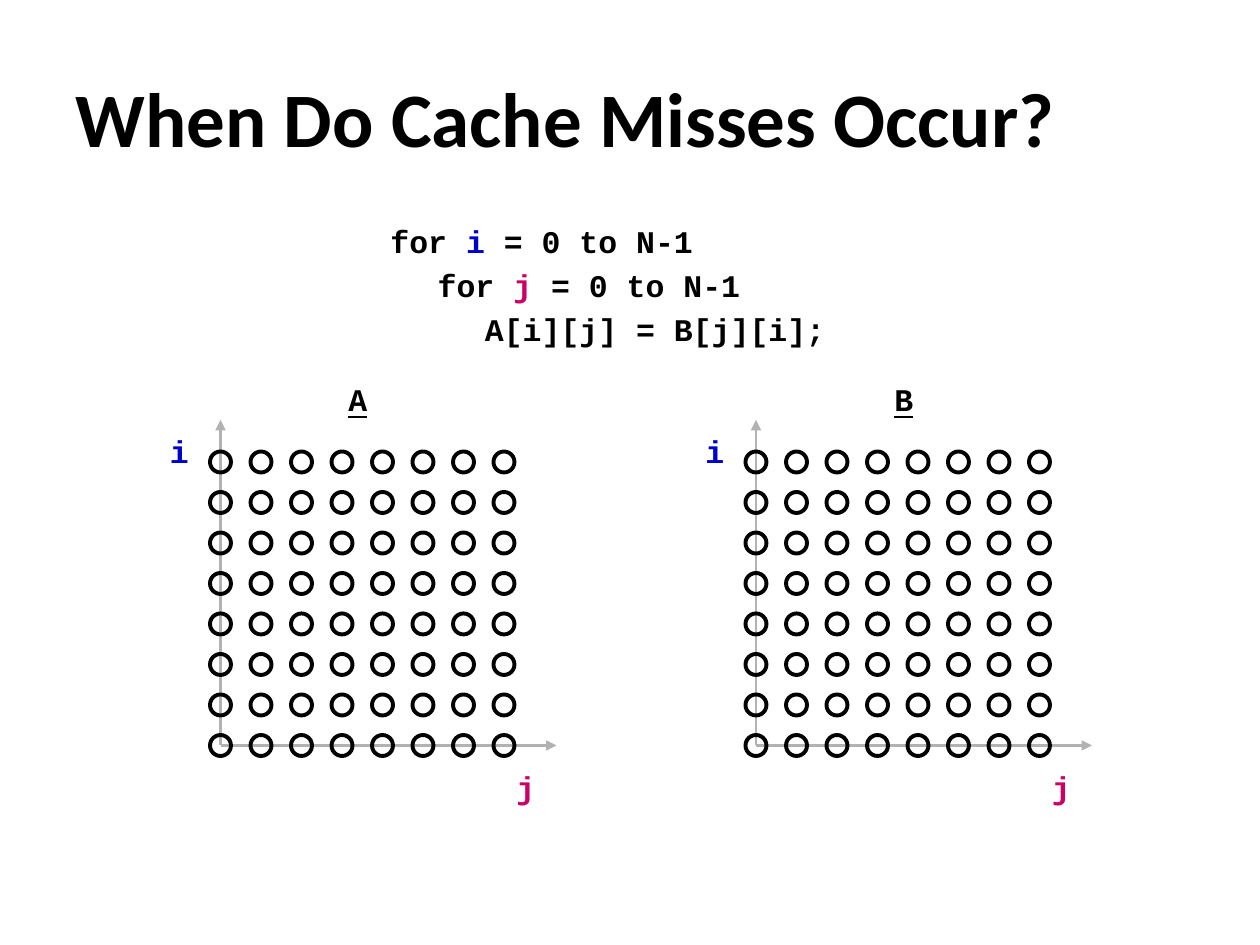
from itertools import product
from lxml import etree
from pptx import Presentation
from pptx.dml.color import RGBColor
from pptx.enum.shapes import MSO_CONNECTOR, MSO_SHAPE
from pptx.enum.text import MSO_ANCHOR
from pptx.oxml.ns import qn
from pptx.util import Pt

STRAIGHT = MSO_CONNECTOR.STRAIGHT
CIRCLE = MSO_SHAPE.OVAL
TOP, MIDDLE = MSO_ANCHOR.TOP, MSO_ANCHOR.MIDDLE

BLACK = RGBColor(0x00, 0x00, 0x00)
BLUE = RGBColor(0x00, 0x00, 0xCC)
MAGENTA = RGBColor(0xCC, 0x00, 0x66)
GRAY = RGBColor(0xB2, 0xB2, 0xB2)

TITLE = "When Do Cache Misses Occur?"
CODE = [
    [("for ", BLACK), ("i", BLUE), (" = 0 to N-1", BLACK)],
    [("for ", BLACK), ("j", MAGENTA), (" = 0 to N-1", BLACK)],
    [("A[i][j] = B[j][i];", BLACK)],
]
MATRICES = [("A", 126, 192), ("B", 432, 504)]

INDENT = 27
COUNT = 8
DIAMETER = 12
PITCH = 162 / (COUNT - 1)
BASE = 426


def add_text(shapes, area, lines, size=18, font="Courier New", top=6.6,
             anchor=TOP, spacing=0.7, underline=None, wrap=True):
    box = shapes.add_textbox(*map(Pt, area))
    frame = box.text_frame
    frame.word_wrap = wrap
    frame.vertical_anchor = anchor
    frame.margin_top = Pt(top)
    for level, line in enumerate(lines):
        para = frame.paragraphs[0] if level == 0 else frame.add_paragraph()
        para.line_spacing = spacing
        if level:
            para.space_before = Pt(10)
            para._p.get_or_add_pPr().set("marL", str(Pt(level * INDENT)))
        for text, color in line:
            span = para.add_run()
            span.text = text
            span.font.name = font
            span.font.size = Pt(size)
            span.font.bold = True
            span.font.underline = underline
            span.font.color.rgb = color


def add_axis(shapes, start, end):
    axis = shapes.add_connector(STRAIGHT, *map(Pt, start + end))
    axis.line.color.rgb = GRAY
    axis.line.width = Pt(1.5)
    etree.SubElement(axis.line._get_or_add_ln(), qn("a:tailEnd"), type="triangle")
    etree.SubElement(axis._element.spPr, qn("a:effectLst"))


def add_matrix(page, origin):
    shapes = page.shapes.add_group_shape().shapes
    add_axis(shapes, (origin, BASE), (origin, 240))
    add_axis(shapes, (origin, BASE), (origin + 192, BASE))
    add_text(shapes, (origin - 36, 246, 23, 22.5), [[("i", BLUE)]])
    add_text(shapes, (origin + 162, 438, 23, 22.5), [[("j", MAGENTA)]])
    for row, column in product(range(COUNT), repeat=2):
        left = origin + column * PITCH - DIAMETER / 2
        top = BASE - row * PITCH - DIAMETER / 2
        cell = shapes.add_shape(CIRCLE, Pt(left), Pt(top), Pt(DIAMETER), Pt(DIAMETER))
        cell.shadow.inherit = False
        cell.fill.background()
        cell.line.color.rgb = BLACK
        cell.line.width = Pt(2.25)


def main():
    deck = Presentation()
    deck.slide_width, deck.slide_height = Pt(720), Pt(540)
    page = deck.slides.add_slide(deck.slide_layouts[6])
    add_text(page.shapes, (36, 21.6, 648, 90), [[(TITLE, BLACK)]], size=44,
             font="Calibri", top=3.6, anchor=MIDDLE, spacing=1)
    add_text(page.shapes, (216, 126, 264, 74), CODE)
    for name, origin, label_left in MATRICES:
        add_matrix(page, origin)
        add_text(page.shapes, (label_left, 210, 29, 36), [[(name, BLACK)]],
                 top=7.3, spacing=1, underline=True, wrap=False)
    deck.save("out.pptx")


if __name__ == "__main__":
    main()
